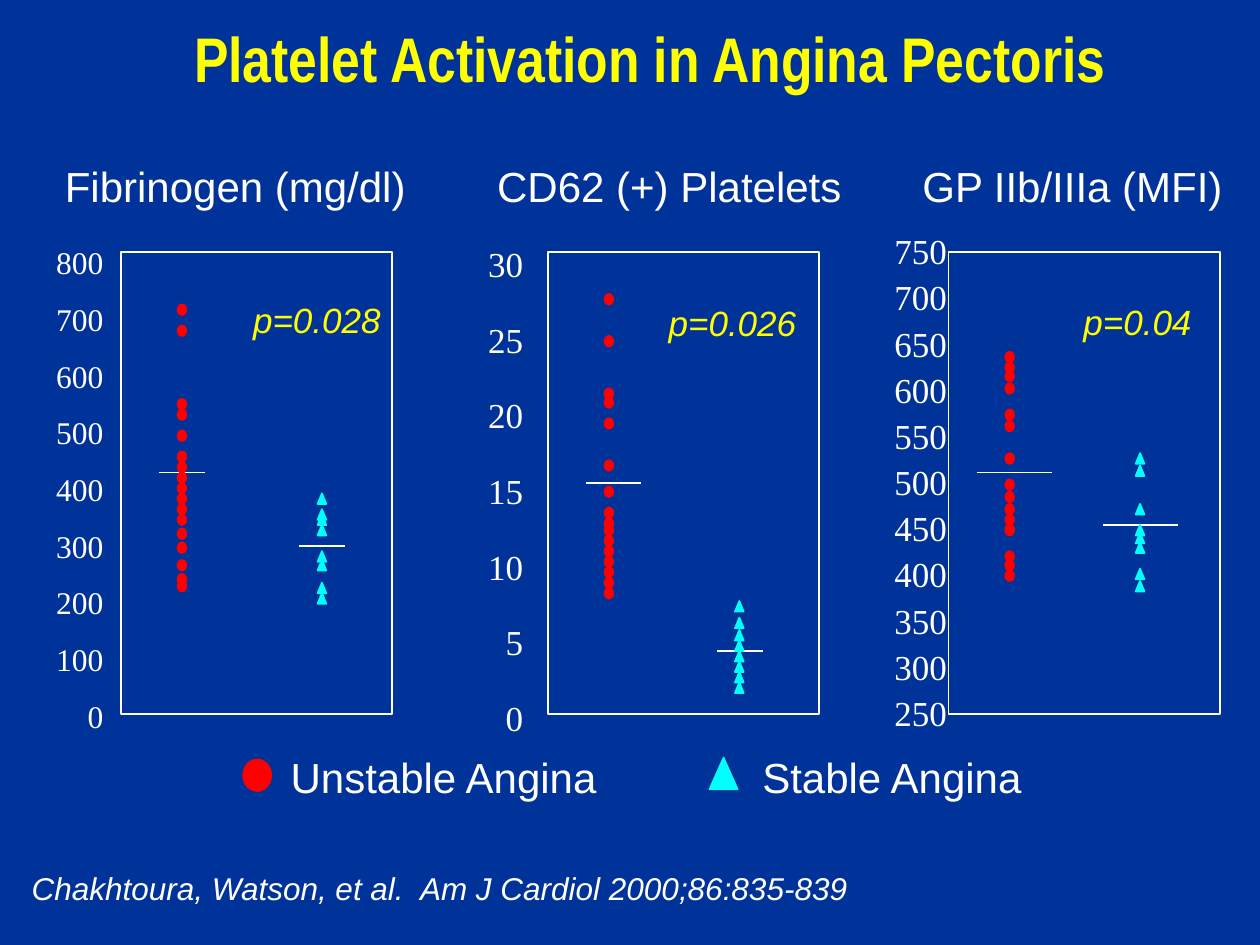
import pptx
import pptx.dml.color
import pptx.enum.shapes
import pptx.enum.text
import pptx.util
from lxml import etree
from pptx.oxml.ns import qn

Pt = pptx.util.Pt
SHAPES = pptx.enum.shapes.MSO_SHAPE
ALIGN = pptx.enum.text.PP_ALIGN
ANCHOR = pptx.enum.text.MSO_ANCHOR

BLUE, WHITE, YELLOW, RED, CYAN = "003399", "FFFFFF", "FFFF00", "FF0000", "00FFFF"
FRAME_TOP, FRAME_WIDTH, FRAME_HEIGHT = 144, 155, 264
MARKER_WIDTH, MARKER_HEIGHT = 5, 6

# Each group: marker left, marker tops, mean line (left, right, height)
PANELS = [
    dict(
        heading=("Fibrinogen (mg/dl)", 30, 216), frame_left=69,
        labels=range(800, -1, -100), label_box=(22, 124.6, 44.2, 302),
        label_format=dict(size=18, spacing=1.5, align=ALIGN.RIGHT),
        p_value=("p=0.028", 137.5, 167, 90),
        unstable=(101.5, [174, 186, 228, 234, 246, 258, 264, 270, 276, 282, 288,
                          294, 302, 310, 320, 328, 332], (90.7, 117.4, 270)),
        stable=(181.5, [282, 291, 294, 300, 315, 320, 333, 339], (170.6, 197.3, 312)),
    ),
    dict(
        heading=("CD62 (+) Platelets", 277, 218), frame_left=313,
        labels=range(30, -1, -5), label_box=(268, 116, 38, 312.5),
        label_format=dict(size=20, spacing=1.8, align=ALIGN.RIGHT),
        p_value=("p=0.026", 375, 168.5, 90),
        unstable=(345.5, [168, 192, 222, 227, 239, 263, 278, 290, 296, 300, 306,
                          312, 318, 324, 330, 336], (334.8, 366.5, 276)),
        stable=(420, [343.5, 353, 360, 366, 372, 378, 384, 390], (409.7, 436.3, 372)),
    ),
    dict(
        heading=("GP IIb/IIIa (MFI)", 520, 195), frame_left=542,
        labels=range(750, 249, -50), label_box=(504, 125.3, 46, 300),
        label_format=dict(size=20, spacing=1.1),
        p_value=("p=0.04", 612, 168, 79),
        unstable=(574.5, [201, 207, 212, 219, 234, 240.5, 259, 274, 281, 288, 294,
                          299.5, 300, 315, 320, 326], (558, 601, 270)),
        stable=(649, [259, 266, 288, 300, 304.5, 310, 325, 332], (630, 673, 300)),
    ),
]


def color(hex_string):
    return pptx.dml.color.RGBColor.from_string(hex_string)


def write(frame, text, size=24, font="Arial", fill=WHITE, bold=False,
          italic=False, align=ALIGN.LEFT, spacing=None):
    """Fill a text frame with one paragraph per line of text."""
    for index, line in enumerate(text.split("\n")):
        paragraph = frame.paragraphs[0] if index == 0 else frame.add_paragraph()
        paragraph.alignment = align
        paragraph.line_spacing = spacing
        run = paragraph.add_run()
        run.text = line
        run.font.size, run.font.name = Pt(size), font
        run.font.bold, run.font.italic = bold, italic
        run.font.color.rgb = color(fill)


class Board:
    """Holds the current slide and draws each kind of element on it."""

    def __init__(self, slide, line_width=1):
        self.slide = slide
        self.line_width = line_width
        slide.background.fill.solid()
        slide.background.fill.fore_color.rgb = color(BLUE)

    def text(self, text, left, top, width, height, anchor=ANCHOR.TOP, **style):
        box = self.slide.shapes.add_textbox(Pt(left), Pt(top), Pt(width), Pt(height))
        box.text_frame.word_wrap = True
        box.text_frame.vertical_anchor = anchor
        write(box.text_frame, text, **style)

    def shape(self, kind, left, top, width, height, line, fill=None):
        shape = self.slide.shapes.add_shape(kind, Pt(left), Pt(top), Pt(width), Pt(height))
        shape.shadow.inherit = False
        if fill:
            shape.fill.solid()
            shape.fill.fore_color.rgb = color(fill)
        else:
            shape.fill.background()
        shape.line.color.rgb = color(line)
        shape.line.width = Pt(self.line_width)

    def mean_line(self, left, right, height):
        connector = self.slide.shapes.add_connector(
            pptx.enum.shapes.MSO_CONNECTOR.STRAIGHT,
            Pt(left), Pt(height), Pt(right), Pt(height))
        connector.line.color.rgb = color(WHITE)
        connector.line.width = Pt(self.line_width)
        etree.SubElement(connector._element.spPr, qn("a:effectLst"))

    def group(self, kind, fill, left, tops, mean):
        self.mean_line(*mean)
        for top in tops:
            self.shape(kind, left, top, MARKER_WIDTH, MARKER_HEIGHT, fill, fill)

    def panel(self, panel):
        heading, left, width = panel["heading"]
        self.text(heading, left, 88, width, 36)
        self.shape(SHAPES.RECTANGLE, panel["frame_left"], FRAME_TOP,
                   FRAME_WIDTH, FRAME_HEIGHT, WHITE)
        self.text("\n".join(map(str, panel["labels"])), *panel["label_box"],
                  font="Times New Roman", **panel["label_format"])
        self.group(SHAPES.OVAL, RED, *panel["unstable"])
        self.group(SHAPES.ISOSCELES_TRIANGLE, CYAN, *panel["stable"])
        p_value, left, top, width = panel["p_value"]
        self.text(p_value, left, top, width, 31, size=20, fill=YELLOW, italic=True)


def main():
    presentation = pptx.Presentation()
    presentation.slide_width, presentation.slide_height = Pt(720), Pt(540)
    board = Board(presentation.slides.add_slide(presentation.slide_layouts[6]))

    # Title
    board.text("Platelet Activation in Angina Pectoris", 83.5, 0, 576, 66,
               anchor=ANCHOR.MIDDLE, size=36, font="Arial Narrow", fill=YELLOW,
               bold=True, align=ALIGN.CENTER)

    # Three scatter panels
    for panel in PANELS:
        board.panel(panel)

    # Legend
    board.shape(SHAPES.OVAL, 139, 434, 16, 18, RED, RED)
    board.text("Unstable Angina", 159, 426, 196, 36)
    board.shape(SHAPES.ISOSCELES_TRIANGLE, 405.5, 433, 16, 18, CYAN, CYAN)
    board.text("Stable Angina", 428.5, 426, 170, 36)

    # Citation
    board.text("Chakhtoura, Watson, et al.  Am J Cardiol 2000;86:835-839",
               11, 493, 495, 29, size=18, italic=True)

    presentation.save("out.pptx")


if __name__ == "__main__":
    main()
